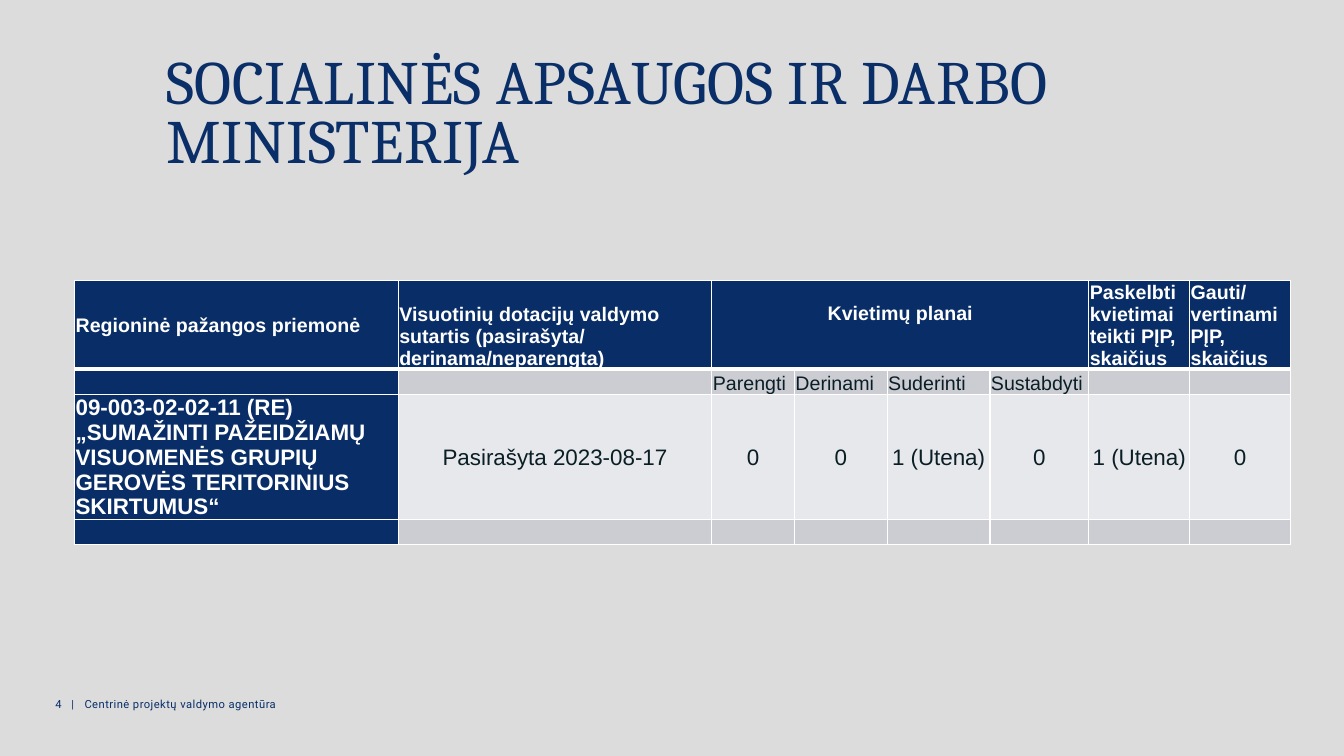
from lxml import etree
from pptx import Presentation
from pptx.dml.color import RGBColor
from pptx.enum.text import MSO_ANCHOR, MSO_AUTO_SIZE, PP_ALIGN
from pptx.oxml.ns import qn
from pptx.util import Inches, Pt

LEFT, CENTER = PP_ALIGN.LEFT, PP_ALIGN.CENTER
TOP, MIDDLE, BOTTOM = MSO_ANCHOR.TOP, MSO_ANCHOR.MIDDLE, MSO_ANCHOR.BOTTOM
NO_FIT = MSO_AUTO_SIZE.NONE

COLORS = {"background": "DCDCDC", "title": "092E68", "header": "092D67", "band": "CCCDD3",
          "body": "E7E8EB", "ink": "0A1E26", "white": "FFFFFF"}
WIDTH, HEIGHT = 13.33, 7.5
COLUMNS = [3.21, 3.11, 0.82, 0.92, 1.02, 0.98, 1, 1]
ROWS = [0.88, 0.22, 1.24, 0.22]
PLANS_COLUMN, PLANS_SPAN = 2, 4
HEADER_LINE, GRID_LINE = 3, 1
CELLS = [
    ["Regioninė pažangos priemonė",
     "Visuotinių dotacijų valdymo sutartis (pasirašyta/ derinama/neparengta)",
     "Kvietimų planai", "", "", "",
     "Paskelbti kvietimai teikti PĮP, skaičius", "Gauti/vertinami PĮP, skaičius"],
    ["", "", "Parengti", "Derinami", "Suderinti", "Sustabdyti", "", ""],
    ["09-003-02-02-11 (RE) „SUMAŽINTI PAŽEIDŽIAMŲ VISUOMENĖS GRUPIŲ GEROVĖS "
     "TERITORINIUS SKIRTUMUS“",
     "Pasirašyta 2023-08-17", "0", "0", "1 (Utena)", "0", "1 (Utena)", "0"],
    [""] * len(COLUMNS),
]


def rgb(name):
    return RGBColor.from_string(COLORS[name])


def write(tf, text, size, color, font="Arial", bold=False, align=LEFT, spacing=0):
    """Fill the first paragraph of a text frame; spacing is letter spacing in points."""
    tf.word_wrap = True
    p = tf.paragraphs[0]
    p.alignment = align
    if not text:
        p._p.get_or_add_endParaRPr().set("sz", str(size * 100))
        return p
    r = p.add_run()
    r.text = text
    r.font.size, r.font.name, r.font.bold = Pt(size), font, bold
    r.font.color.rgb = rgb(color)
    if spacing:
        r._r.get_or_add_rPr().set("spc", str(round(spacing * 100)))
    return p


def add_title(slide, left, top, width, height):
    sp = slide.shapes.title
    sp.left, sp.top, sp.width, sp.height = map(Inches, (left, top, width, height))
    tf = sp.text_frame
    tf.auto_size, tf.vertical_anchor = NO_FIT, TOP
    p = write(tf, "SOCIALINĖS APSAUGOS IR DARBO MINISTERIJA", 44, "title",
              font="Cambria", spacing=0.4)
    p.line_spacing, p.space_after = 0.8, Pt(12)


def set_borders(cell, top, bottom):
    tc_pr = cell._tc.get_or_add_tcPr()
    sides = {"lnL": GRID_LINE, "lnR": GRID_LINE, "lnT": top, "lnB": bottom}
    for i, (side, points) in enumerate(sides.items()):
        ln = etree.Element(qn("a:" + side), w=str(Pt(points)))
        fill = etree.SubElement(ln, qn("a:solidFill"))
        etree.SubElement(fill, qn("a:srgbClr"), val=COLORS["white"])
        tc_pr.insert(i, ln)


def format_cell(cell, text, row, col):
    is_header, is_body = row == 0, row == 2
    is_dark = is_header or col == 0
    is_plans = is_header and col == PLANS_COLUMN
    is_value = is_body and col > 0
    is_middle = is_value or (is_header and col == 0)
    cell.margin_left = cell.margin_right = cell.margin_top = Inches(0.01)
    cell.margin_bottom = Inches(ROWS[0] / 2 if is_plans else 0)
    cell.vertical_anchor = MIDDLE if is_middle else BOTTOM
    cell.fill.solid()
    cell.fill.fore_color.rgb = rgb("header" if is_dark else "body" if is_body else "band")
    set_borders(cell, top=HEADER_LINE if row == 1 else GRID_LINE,
                bottom=HEADER_LINE if is_header else GRID_LINE)
    write(cell.text_frame, text, 16 if is_body else 14, "white" if is_dark else "ink",
          bold=is_dark, align=CENTER if is_value or is_plans else LEFT)


def add_measures_table(slide, left, top):
    frame = slide.shapes.add_table(len(ROWS), len(COLUMNS), Inches(left), Inches(top),
                                   Inches(sum(COLUMNS)), Inches(sum(ROWS)))
    table = frame.table
    table.horz_banding = False
    for column, width in zip(table.columns, COLUMNS):
        column.width = Inches(width)
    for row, height in zip(table.rows, ROWS):
        row.height = Inches(height)
    for i, texts in enumerate(CELLS):
        for j, text in enumerate(texts):
            format_cell(table.cell(i, j), text, i, j)
    last_plan = table.cell(0, PLANS_COLUMN + PLANS_SPAN - 1)
    table.cell(0, PLANS_COLUMN).merge(last_plan)


def add_footer(slide, left, top, width, height):
    sp = slide.shapes.add_textbox(*map(Inches, (left, top, width, height)))
    p = write(sp.text_frame, "4\t|\tCentrinė projektų valdymo agentūra", 8, "title",
              font="Roboto", spacing=0.3)
    tabs = etree.SubElement(p._p.get_or_add_pPr(), qn("a:tabLst"))
    for stop in (0.16, 0.29):
        etree.SubElement(tabs, qn("a:tab"), pos=str(Inches(stop)), algn="l")


def main():
    prs = Presentation()
    prs.slide_width, prs.slide_height = Inches(WIDTH), Inches(HEIGHT)
    slide = prs.slides.add_slide(prs.slide_layouts[5])
    slide.background.fill.solid()
    slide.background.fill.fore_color.rgb = rgb("background")
    add_title(slide, 1.55, 0.52, 11.26, 0.65)
    add_measures_table(slide, 0.74, 2.78)
    add_footer(slide, 0.45, 6.87, 3.2, 0.4)
    prs.save("out.pptx")


if __name__ == "__main__":
    main()
